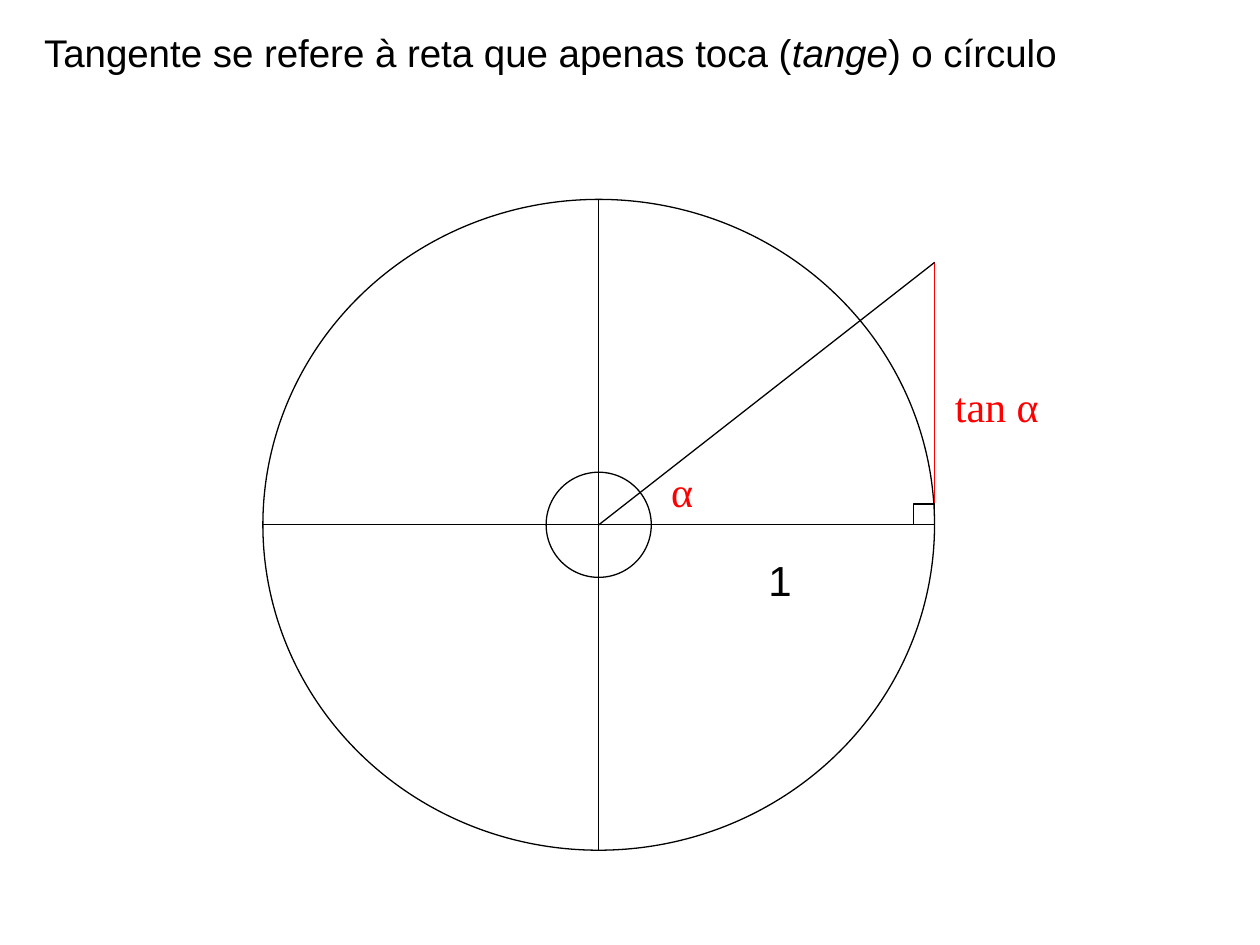
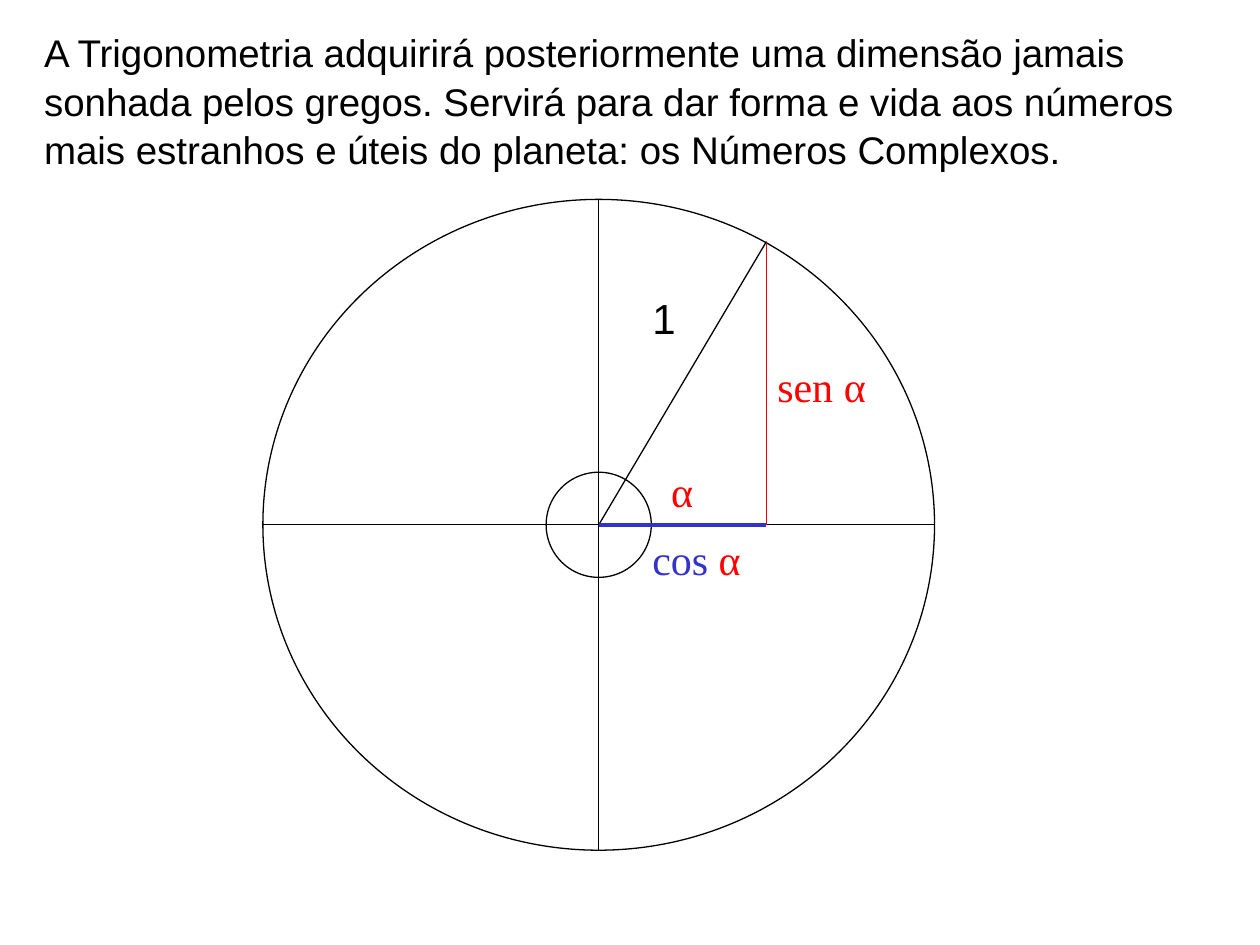
from dataclasses import dataclass

import lxml.etree
import pptx
import pptx.dml.color
import pptx.enum.shapes
import pptx.enum.text
import pptx.oxml.ns
import pptx.slide
import pptx.util

Cm = pptx.util.Cm
Pt = pptx.util.Pt
Color = pptx.dml.color.RGBColor
Shape = pptx.enum.shapes.MSO_SHAPE


@dataclass(frozen=True)
class Theme:
    black: Color = Color(0, 0, 0)
    red: Color = Color(0xFF, 0, 0)
    blue: Color = Color(0x33, 0x33, 0xCC)
    sans: str = "Arial"
    serif: str = "Times New Roman"
    title_size: float = 22
    label_size: float = 24
    line_spacing: float = 1.05
    thin: float = 0.75
    medium: float = 1
    thick: float = 2.25


THEME = Theme()


@dataclass(frozen=True)
class Point:
    x: float
    y: float


@dataclass(frozen=True)
class Segment:
    start: Point
    end: Point
    color: Color = THEME.black
    weight: float = THEME.thin


@dataclass(frozen=True)
class Span:
    text: str
    color: Color | None = None
    italic: bool | None = None


@dataclass(frozen=True)
class Label:
    spans: tuple[Span, ...]
    left: float
    top: float
    width: float
    height: float = 1.27
    font: str = THEME.serif
    size: float = THEME.label_size
    color: Color = THEME.red
    wrap: bool = False


CENTER = Point(12.07, 10.58)
RADIUS_X, RADIUS_Y = 6.77, 6.56
ANGLE_RADIUS = 1.06
RIGHT_ANGLE_SIDE = 0.42

RIGHT = Point(CENTER.x + RADIUS_X, CENTER.y)
COSINE_FOOT = Point(15.45, CENTER.y)
SINE_TOP = Point(COSINE_FOOT.x, 4.87)
TANGENT_TOP = Point(RIGHT.x, 5.29)


def draw_outline(page: pptx.slide.Slide, kind: Shape, left: float, top: float,
                 width: float, height: float) -> None:
    shape = page.shapes.add_shape(kind, Cm(left), Cm(top), Cm(width), Cm(height))
    shape.shadow.inherit = False
    shape.fill.background()
    shape.line.color.rgb = THEME.black
    shape.line.width = Pt(THEME.thin)


def draw_ellipse(page: pptx.slide.Slide, radius_x: float, radius_y: float) -> None:
    draw_outline(page, Shape.OVAL, CENTER.x - radius_x, CENTER.y - radius_y,
                 2 * radius_x, 2 * radius_y)


def draw_segment(page: pptx.slide.Slide, segment: Segment) -> None:
    line = page.shapes.add_connector(
        pptx.enum.shapes.MSO_CONNECTOR.STRAIGHT,
        Cm(segment.start.x), Cm(segment.start.y),
        Cm(segment.end.x), Cm(segment.end.y))
    line.line.color.rgb = segment.color
    line.line.width = Pt(segment.weight)
    properties = line._element.spPr
    lxml.etree.SubElement(properties, pptx.oxml.ns.qn("a:effectLst"))


def draw_label(page: pptx.slide.Slide, label: Label) -> None:
    box = page.shapes.add_textbox(Cm(label.left), Cm(label.top),
                                  Cm(label.width), Cm(label.height))
    frame = box.text_frame
    frame.word_wrap = label.wrap
    frame.auto_size = pptx.enum.text.MSO_AUTO_SIZE.SHAPE_TO_FIT_TEXT
    para = frame.paragraphs[0]
    para.line_spacing = THEME.line_spacing
    para.font.name = label.font
    para.font.size = Pt(label.size)
    para.font.color.rgb = label.color
    for span in label.spans:
        run = para.add_run()
        run.text = span.text
        run.font.italic = span.italic
        if span.color is not None:
            run.font.color.rgb = span.color


def draw_title(page: pptx.slide.Slide, spans: tuple[Span, ...], height: float) -> None:
    draw_label(page, Label(spans, 0.64, 0.42, 23.71, height, THEME.sans,
                           THEME.title_size, THEME.black, True))


def draw_circle(page: pptx.slide.Slide) -> None:
    draw_ellipse(page, RADIUS_X, RADIUS_Y)
    draw_ellipse(page, ANGLE_RADIUS, ANGLE_RADIUS)
    for segment in (
        Segment(Point(CENTER.x - RADIUS_X, CENTER.y), RIGHT),
        Segment(Point(CENTER.x, CENTER.y - RADIUS_Y),
                Point(CENTER.x, CENTER.y + RADIUS_Y)),
        Segment(CENTER, COSINE_FOOT),
    ):
        draw_segment(page, segment)
    draw_label(page, Label((Span("α"),), 13.28, 9.2, 1.04))


def draw_unit(page: pptx.slide.Slide, left: float, top: float, width: float) -> None:
    draw_label(page, Label((Span("1"),), left, top, width,
                           font=THEME.sans, color=THEME.black, wrap=True))


def build_tangent(page: pptx.slide.Slide) -> None:
    draw_title(page, (Span("Tangente se refere à reta que apenas toca ("),
                      Span("tange", italic=True), Span(") o círculo")), 1.19)
    draw_circle(page)
    draw_segment(page, Segment(RIGHT, TANGENT_TOP, THEME.red))
    draw_segment(page, Segment(CENTER, TANGENT_TOP))
    draw_outline(page, Shape.RECTANGLE, RIGHT.x - RIGHT_ANGLE_SIDE,
                 RIGHT.y - RIGHT_ANGLE_SIDE, RIGHT_ANGLE_SIDE, RIGHT_ANGLE_SIDE)
    draw_unit(page, 15.24, 11, 1.27)
    draw_label(page, Label((Span("tan α"),), 19, 7.49, 2.49))


def build_sine_and_cosine(page: pptx.slide.Slide) -> None:
    draw_title(page, (Span(
        "A Trigonometria adquirirá posteriormente uma dimensão jamais sonhada "
        "pelos gregos. Servirá para dar forma e vida aos números mais estranhos "
        "e úteis do planeta: os Números Complexos."),), 3.05)
    draw_circle(page)
    draw_segment(page, Segment(SINE_TOP, COSINE_FOOT, THEME.red, THEME.medium))
    draw_segment(page, Segment(CENTER, SINE_TOP))
    draw_segment(page, Segment(CENTER, COSINE_FOOT, THEME.blue, THEME.thick))
    draw_unit(page, 12.9, 5.72, 0.99)
    draw_label(page, Label((Span("sen α"),), 15.42, 7.09, 2.39))
    draw_label(page, Label((Span("cos ", THEME.blue), Span("α")),
                           12.9, 10.58, 2.97, wrap=True))


def main() -> None:
    deck = pptx.Presentation()
    deck.slide_width, deck.slide_height = Cm(25.4), Cm(19.05)
    blank = deck.slide_layouts[6]
    for build in (build_tangent, build_sine_and_cosine):
        build(deck.slides.add_slide(blank))
    deck.save("out.pptx")


if __name__ == "__main__":
    main()
